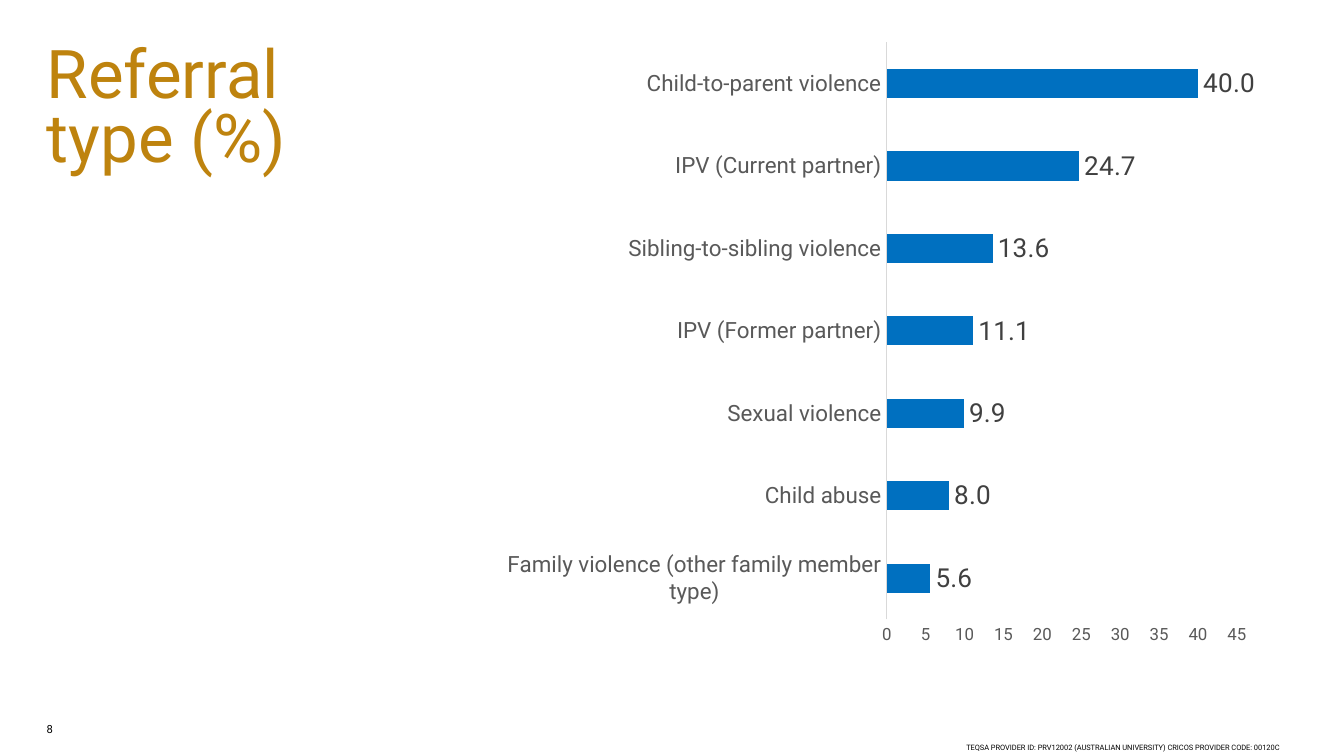
from dataclasses import dataclass

from pptx import Presentation
from pptx.chart.data import CategoryChartData
from pptx.dml.color import RGBColor
from pptx.enum.chart import XL_CHART_TYPE, XL_LABEL_POSITION, XL_TICK_MARK
from pptx.enum.text import MSO_ANCHOR, MSO_AUTO_SIZE, PP_ALIGN
from pptx.util import Pt


@dataclass(frozen=True)
class Theme:
    face: str = "Roboto"
    gold: str = "BE830E"
    black: str = "000000"
    blue: str = "0070C0"
    axis_text: str = "595959"
    axis_line: str = "D9D9D9"
    value_text: str = "404040"
    title_size: float = 36
    value_size: float = 14
    category_size: float = 12
    chart_size: float = 10
    scale_size: float = 9
    number_size: float = 6
    footer_size: float = 4


THEME = Theme()
REFERRALS = {
    "Family violence (other family member type)": 5.6,
    "Child abuse": 8.0,
    "Sexual violence": 9.9,
    "IPV (Former partner)": 11.1,
    "Sibling-to-sibling violence": 13.6,
    "IPV (Current partner)": 24.7,
    "Child-to-parent violence": 40.0,
}


def style_font(font, size, color):
    font.name = THEME.face
    font.size = Pt(size)
    font.bold = False
    font.color.rgb = RGBColor.from_string(color)


def write_text(frame, text, *, size, color=THEME.black, line_spacing=1.0):
    frame.margin_left = frame.margin_right = 0
    frame.margin_top = frame.margin_bottom = 0
    frame.word_wrap = True
    frame.auto_size = MSO_AUTO_SIZE.NONE
    frame.vertical_anchor = MSO_ANCHOR.TOP
    paragraph = frame.paragraphs[0]
    paragraph.alignment = PP_ALIGN.LEFT
    paragraph.line_spacing = line_spacing
    run = paragraph.add_run()
    run.text = text
    style_font(run.font, size, color)


def add_title(slide, text):
    title = slide.shapes.title
    title.left, title.top = Pt(25), Pt(25)
    title.width, title.height = Pt(192), Pt(248)
    write_text(title.text_frame, text, size=THEME.title_size,
               color=THEME.gold, line_spacing=0.8)


def add_label(slide, text, left, top, width, height, **text_format):
    label = slide.shapes.add_textbox(Pt(left), Pt(top), Pt(width), Pt(height))
    write_text(label.text_frame, text, **text_format)


def add_referral_chart(slide, referrals):
    data = CategoryChartData(number_format="0.0")
    data.categories = list(referrals)
    data.add_series("Series 1", list(referrals.values()))
    chart = slide.shapes.add_chart(
        XL_CHART_TYPE.BAR_CLUSTERED,
        Pt(263.5), Pt(16), Pt(412.5), Pt(336), data).chart
    chart.has_legend = False
    chart.has_title = False
    style_font(chart.font, THEME.chart_size, THEME.black)
    style_axes(chart)
    style_bars(chart.plots[0])


def style_axes(chart):
    categories, scale = chart.category_axis, chart.value_axis
    for axis, size in ((categories, THEME.category_size),
                       (scale, THEME.scale_size)):
        axis.has_major_gridlines = False
        axis.major_tick_mark = axis.minor_tick_mark = XL_TICK_MARK.NONE
        style_font(axis.tick_labels.font, size, THEME.axis_text)
    categories.format.line.color.rgb = RGBColor.from_string(THEME.axis_line)
    categories.format.line.width = Pt(0.75)
    scale.format.line.fill.background()
    scale.minimum_scale, scale.maximum_scale = 0, 45
    scale.major_unit = 5
    scale.tick_labels.number_format = "0"
    scale.tick_labels.number_format_is_linked = False


def style_bars(plot):
    plot.gap_width = 182
    plot.vary_by_categories = False
    bars = plot.series[0]
    bars.invert_if_negative = False
    bars.format.fill.solid()
    bars.format.fill.fore_color.rgb = RGBColor.from_string(THEME.blue)
    values = bars.data_labels
    values.show_value = True
    values.number_format = "0.0"
    values.number_format_is_linked = False
    values.position = XL_LABEL_POSITION.OUTSIDE_END
    style_font(values.font, THEME.value_size, THEME.value_text)


def main():
    deck = Presentation()
    deck.slide_width, deck.slide_height = Pt(720), Pt(405)
    slide = deck.slides.add_slide(deck.slide_layouts[5])
    add_title(slide, "Referral type (%)")
    add_referral_chart(slide, REFERRALS)
    add_label(slide, "8", 25, 387, 28, 9, size=THEME.number_size)
    add_label(
        slide,
        "TEQSA PROVIDER ID: PRV12002 (AUSTRALIAN UNIVERSITY) "
        "CRICOS PROVIDER CODE: 00120C",
        517.7, 398, 200, 7, size=THEME.footer_size)
    deck.save("out.pptx")


if __name__ == "__main__":
    main()
